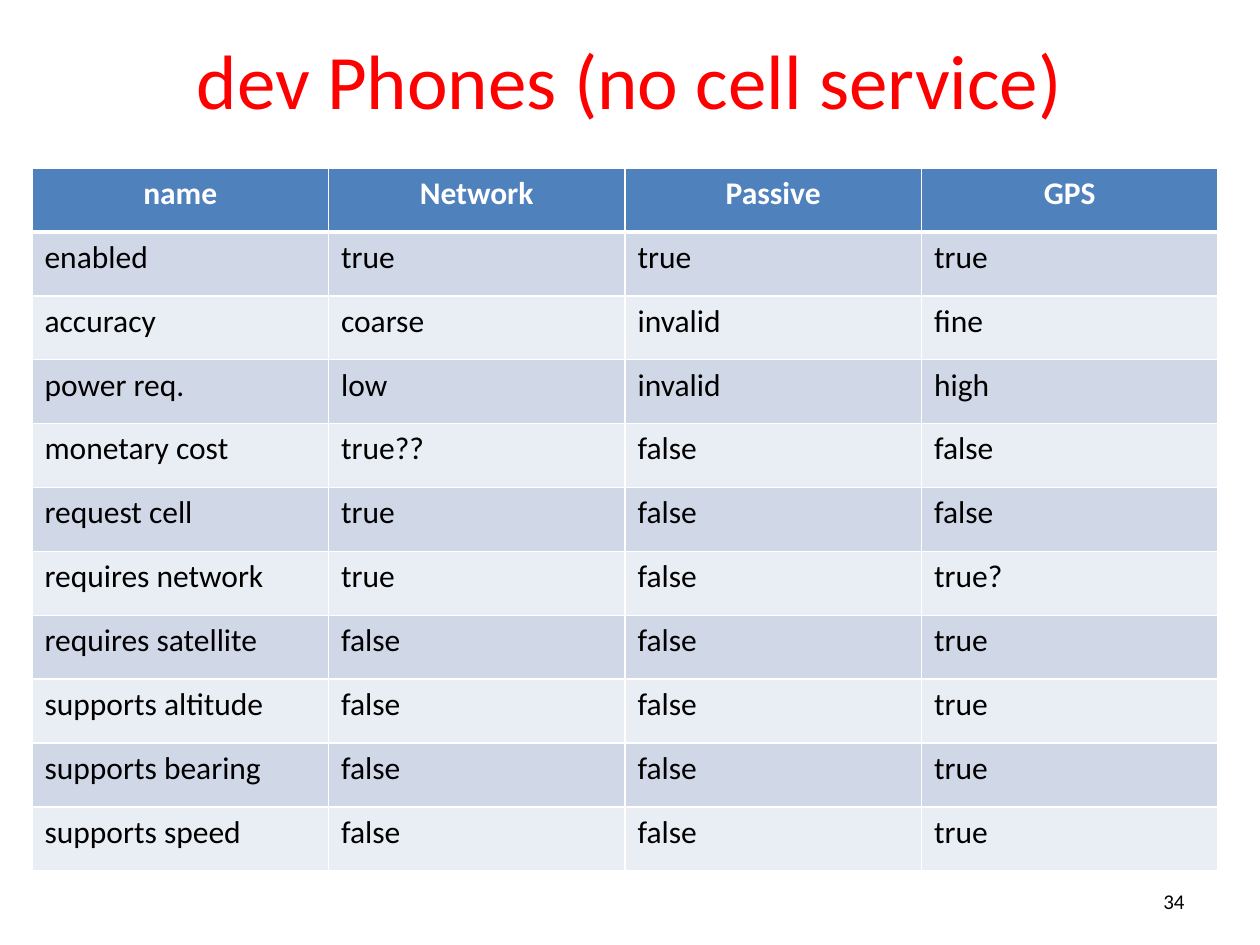
from lxml import etree
from pptx import Presentation
from pptx.dml.color import RGBColor
from pptx.enum.text import MSO_ANCHOR, PP_ALIGN
from pptx.oxml.ns import qn
from pptx.util import Pt

LEFT, CENTER, RIGHT = PP_ALIGN.LEFT, PP_ALIGN.CENTER, PP_ALIGN.RIGHT
MIDDLE = MSO_ANCHOR.MIDDLE
PX = 914400 / 126
COLORS = {
    "title": "FF0000",
    "text": "000000",
    "white": "FFFFFF",
    "header": "4F81BD",
    "odd_row": "D0D8E8",
    "even_row": "E9EDF4",
}
ROWS = [
    ("name", "Network", "Passive", "GPS"),
    ("enabled", "true", "true", "true"),
    ("accuracy", "coarse", "invalid", "fine"),
    ("power req.", "low", "invalid", "high"),
    ("monetary cost", "true??", "false", "false"),
    ("request cell", "true", "false", "false"),
    ("requires network", "true", "false", "true?"),
    ("requires satellite", "false", "false", "true"),
    ("supports altitude", "false", "false", "true"),
    ("supports bearing", "false", "false", "true"),
    ("supports speed", "false", "false", "true"),
]


def write_text(text_frame, text, size=18, color="text", bold=False, align=LEFT):
    paragraph = text_frame.paragraphs[0]
    paragraph.alignment = align
    run = paragraph.add_run()
    run.text = text
    run.font.name = "Calibri"
    run.font.size = Pt(size)
    run.font.bold = bold
    run.font.color.rgb = RGBColor.from_string(COLORS[color])


def add_border(cell, side, points):
    """Draw a white line on one side (L, R, T or B); call before filling the cell."""
    properties = cell._tc.get_or_add_tcPr()
    line = etree.SubElement(properties, qn(f"a:ln{side}"), w=str(Pt(points)))
    fill = etree.SubElement(line, qn("a:solidFill"))
    etree.SubElement(fill, qn("a:srgbClr"), val=COLORS["white"])


presentation = Presentation()
presentation.slide_width = round(1260 * PX)
presentation.slide_height = round(945 * PX)
slide = presentation.slides.add_slide(presentation.slide_layouts[6])

# Title and slide number
for bounds, text, text_format in [
    ((63, 0, 1134, 158), "dev Phones (no cell service)",
     dict(size=44, color="title", align=CENTER)),
    ((903, 876, 294, 50), "34", dict(size=12, align=RIGHT)),
]:
    box = slide.shapes.add_textbox(*(round(length * PX) for length in bounds))
    box.text_frame.word_wrap = True
    box.text_frame.vertical_anchor = MIDDLE
    write_text(box.text_frame, text, **text_format)

# Location provider table
table_bounds = [round(length * PX) for length in (32, 168, 1186, 703)]
table = slide.shapes.add_table(len(ROWS), len(ROWS[0]), *table_bounds).table
for row_index, row in enumerate(ROWS):
    is_header = row_index == 0
    if is_header:
        fill_color = "header"
        text_format = dict(color="white", bold=True, align=CENTER)
    else:
        fill_color = "odd_row" if row_index % 2 else "even_row"
        text_format = {}
    borders = {"L": 1, "R": 1, "T": 3 if row_index == 1 else 1, "B": 3 if is_header else 1}
    for column_index, text in enumerate(row):
        cell = table.cell(row_index, column_index)
        for side, points in borders.items():
            add_border(cell, side, points)
        cell.fill.solid()
        cell.fill.fore_color.rgb = RGBColor.from_string(COLORS[fill_color])
        write_text(cell.text_frame, text, **text_format)

presentation.save("out.pptx")
